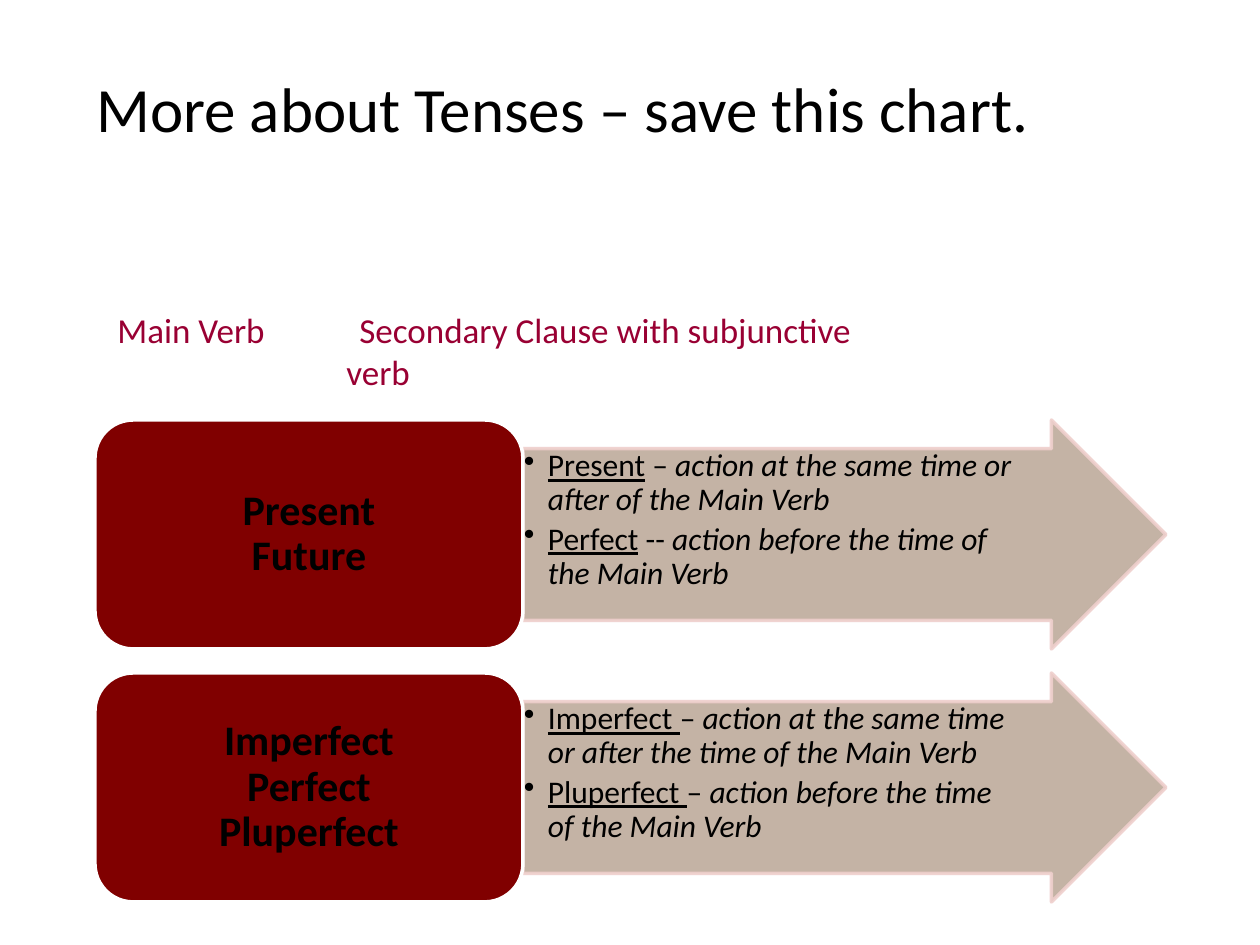
from pptx import Presentation
from pptx.dml.color import RGBColor
from pptx.enum.shapes import MSO_SHAPE as Shape
from pptx.enum.text import MSO_ANCHOR as Anchor, PP_ALIGN as Align
from pptx.oxml.ns import qn
from pptx.util import Pt
from lxml import etree

PX = 914400 / 126
FONT = "Calibri"
BLACK, WINE, MAROON, WHITE = "000000", "990033", "800000", "FFFFFF"
TAN, PINK = "BEAB9C", "EFCFCC"
ROW_TOP, ROW_STEP, ROW_HEIGHT = 420, 253, 229

# Main verb tenses, then (tense, separator, meaning) of the secondary clause
ROWS = [
    ("Present\vFuture", [
        ("Present", " – ", "action at the same time or after of the Main Verb"),
        ("Perfect", " -- ", "action before the time of the Main Verb")]),
    ("Imperfect\vPerfect\vPluperfect", [
        ("Imperfect ", "– ", "action at the same time or after the time of the Main Verb"),
        ("Pluperfect ", "– ", "action before the time of the Main Verb")]),
]


def px(length):
    return round(length * PX)


def color(value):
    return RGBColor.from_string(value)


def style(font, size, value=BLACK):
    font.name, font.size = FONT, Pt(size)
    font.color.rgb = color(value)


def set_alpha(fill_parent, percent):
    for rgb in fill_parent.iter(qn("a:srgbClr")):
        etree.SubElement(rgb, qn("a:alpha"), val=str(percent * 1000))


def add_text(page, left, top, width, height, text, size, value=BLACK, anchor=Anchor.TOP):
    box = page.shapes.add_textbox(px(left), px(top), px(width), px(height))
    frame = box.text_frame
    frame.word_wrap, frame.vertical_anchor = True, anchor
    frame.text = text
    for para in frame.paragraphs:
        for span in para.runs:
            style(span.font, size, value)
    return frame


def add_block(page, kind, left, top, width, fill, line):
    block = page.shapes.add_shape(kind, px(left), px(top), px(width), px(ROW_HEIGHT))
    block.shadow.inherit = False
    block.fill.solid()
    block.fill.fore_color.rgb = color(fill)
    block.line.color.rgb = color(line)
    block.line.width = Pt(2)
    block.text_frame.word_wrap = True
    return block


def add_heading(page):
    frame = add_text(page, 105, 294, 1071, 105,
                     "Main Verb\tSecondary Clause with subjunctive\nverb",
                     20, WINE, Anchor.BOTTOM)
    first, second = (para._p.get_or_add_pPr() for para in frame.paragraphs)
    tabs = etree.SubElement(first, qn("a:tabLst"))
    etree.SubElement(tabs, qn("a:tab"), pos=str(px(242)), algn="l")
    second.set("marL", str(px(229)))


def add_bullet(para, tense, separator, meaning):
    props = para._p.get_or_add_pPr()
    props.set("marL", str(px(24)))
    props.set("indent", str(px(-24)))
    para.alignment = Align.LEFT
    para.line_spacing, para.space_after = 0.9, Pt(3)
    etree.SubElement(props, qn("a:buChar"), char="•")
    for text, underline, italic in ((tense, True, False), (separator, False, False),
                                    (meaning, False, True)):
        span = para.add_run()
        span.text = text
        style(span.font, 18)
        span.font.underline, span.font.italic = underline, italic


def add_arrow(page, top, clauses):
    arrow = add_block(page, Shape.RIGHT_ARROW, 523, top, 643, TAN, PINK)
    arrow.adjustments[0], arrow.adjustments[1] = 0.75, 0.5
    set_alpha(arrow._element.spPr, 90)
    frame = arrow.text_frame
    frame.vertical_anchor = Anchor.TOP
    frame.margin_left = frame.margin_top = frame.margin_bottom = px(1)
    frame.margin_right = px(58)
    for index, clause in enumerate(clauses):
        para = frame.add_paragraph() if index else frame.paragraphs[0]
        add_bullet(para, *clause)


def add_main_verb(page, top, tenses):
    box = add_block(page, Shape.ROUNDED_RECTANGLE, 95, top, 428, MAROON, WHITE)
    frame = box.text_frame
    frame.vertical_anchor = Anchor.MIDDLE
    frame.text = tenses
    para = frame.paragraphs[0]
    para.alignment, para.line_spacing = Align.CENTER, 0.9
    for span in para.runs:
        style(span.font, 24)
        span.font.bold = True


def main():
    deck = Presentation()
    deck.slide_width, deck.slide_height = px(1260), px(945)
    page = deck.slides.add_slide(deck.slide_layouts[6])

    # Title and column headings
    add_text(page, 84, 63, 1081, 89, "More about Tenses – save this chart.", 36)
    add_heading(page)

    # One row per group of main verb tenses
    for index, (tenses, clauses) in enumerate(ROWS):
        top = ROW_TOP + index * ROW_STEP
        add_arrow(page, top, clauses)
        add_main_verb(page, top, tenses)

    deck.save("out.pptx")


if __name__ == "__main__":
    main()
